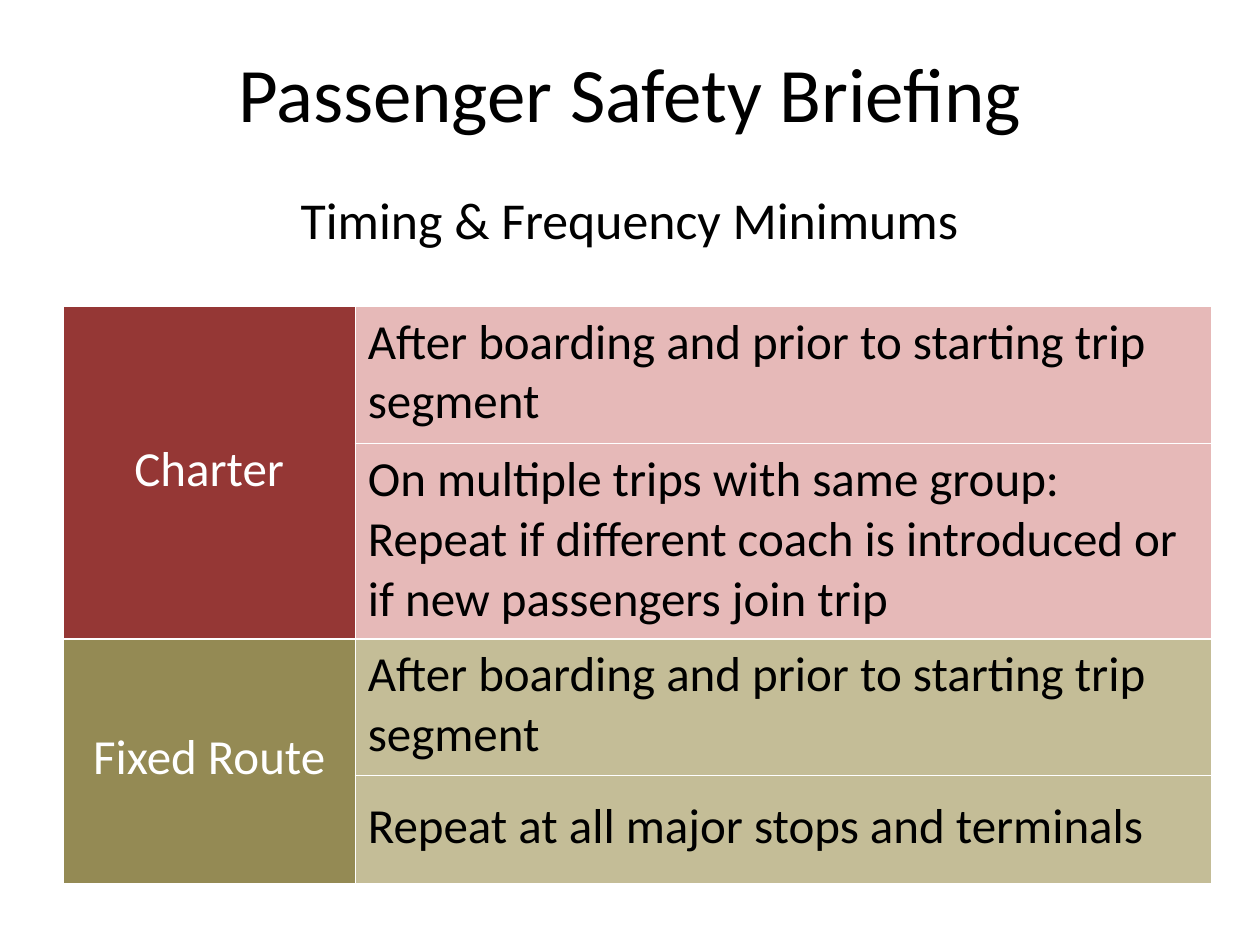
from lxml import etree
from pptx import Presentation
from pptx.dml.color import RGBColor
from pptx.enum.text import MSO_ANCHOR, PP_ALIGN
from pptx.oxml.ns import qn
from pptx.util import Inches, Pt

CENTER, LEFT = PP_ALIGN.CENTER, PP_ALIGN.LEFT
MIDDLE, TOP = MSO_ANCHOR.MIDDLE, MSO_ANCHOR.TOP
FONT = "Calibri"
BLACK, WHITE = "000000", "FFFFFF"
BOARDING = ["After boarding and prior to starting trip segment"]

TITLE = "Passenger Safety Briefing"
SUBTITLE = "Timing & Frequency Minimums"
SERVICES = [
    {"name": "Charter", "dark": "953735", "light": "E6B9B8", "rules": [
        BOARDING,
        ["On multiple trips with same group:",
         "Repeat if different coach is introduced or if new passengers join trip"],
    ]},
    {"name": "Fixed Route", "dark": "948A54", "light": "C4BD97", "rules": [
        BOARDING,
        ["Repeat at all major stops and terminals"],
    ]},
]
COLUMN_WIDTHS = [2.32, 6.8]
ROW_HEIGHTS = [1.09, 1.55, 1.08, 0.86]


def color(value):
    return RGBColor.from_string(value)


def write(frame, lines, size, ink, align):
    for index, line in enumerate(lines):
        para = frame.paragraphs[0] if index == 0 else frame.add_paragraph()
        para.alignment = align
        span = para.add_run()
        span.text = line
        span.font.name = FONT
        span.font.size = Pt(size)
        span.font.color.rgb = color(ink)


def add_heading(page, text, top, height, size, anchor):
    box = page.shapes.add_textbox(Inches(0.5), Inches(top), Inches(9), Inches(height))
    frame = box.text_frame
    frame.word_wrap = True
    frame.vertical_anchor = anchor
    write(frame, [text], size, BLACK, CENTER)
    return frame.paragraphs[0]


def style_cell(cell, fill):
    """Set the fill, margins and thin white borders of a cell."""
    cell.vertical_anchor = MIDDLE
    cell.margin_left = cell.margin_right = cell.margin_bottom = Inches(0.1)
    cell.margin_top = Inches(0.05)
    properties = cell._tc.get_or_add_tcPr()
    for side in ("a:lnL", "a:lnR", "a:lnT", "a:lnB"):
        line = etree.SubElement(properties, qn(side), w=str(Pt(1)))
        solid = etree.SubElement(line, qn("a:solidFill"))
        etree.SubElement(solid, qn("a:srgbClr"), val=WHITE)
    cell.fill.solid()
    cell.fill.fore_color.rgb = color(fill)


def add_service_table(page):
    shape = page.shapes.add_table(
        len(ROW_HEIGHTS), len(COLUMN_WIDTHS), Inches(0.5), Inches(2.43),
        Inches(sum(COLUMN_WIDTHS)), Inches(sum(ROW_HEIGHTS)))
    table = shape.table
    table.first_row = table.horz_banding = False
    for column, width in zip(table.columns, COLUMN_WIDTHS):
        column.width = Inches(width)
    for row, height in zip(table.rows, ROW_HEIGHTS):
        row.height = Inches(height)

    first = 0
    for service in SERVICES:
        last = first + len(service["rules"]) - 1
        for row, lines in enumerate(service["rules"], first):
            style_cell(table.cell(row, 0), service["dark"])
            rule = table.cell(row, 1)
            style_cell(rule, service["light"])
            write(rule.text_frame, lines, 28, BLACK, LEFT)
        name = table.cell(first, 0)
        name.merge(table.cell(last, 0))
        write(name.text_frame, [service["name"]], 28, WHITE, CENTER)
        first = last + 1


def main():
    deck = Presentation()
    deck.slide_width, deck.slide_height = Inches(10), Inches(7.5)
    page = deck.slides.add_slide(deck.slide_layouts[6])
    add_heading(page, TITLE, 0.2, 1.05, 44, MIDDLE)
    subtitle = add_heading(page, SUBTITLE, 1.5, 0.73, 29.6, TOP)
    subtitle.line_spacing = 0.9
    subtitle.space_before, subtitle.space_after = Pt(7), Pt(12)
    add_service_table(page)
    deck.save("out.pptx")


if __name__ == "__main__":
    main()
